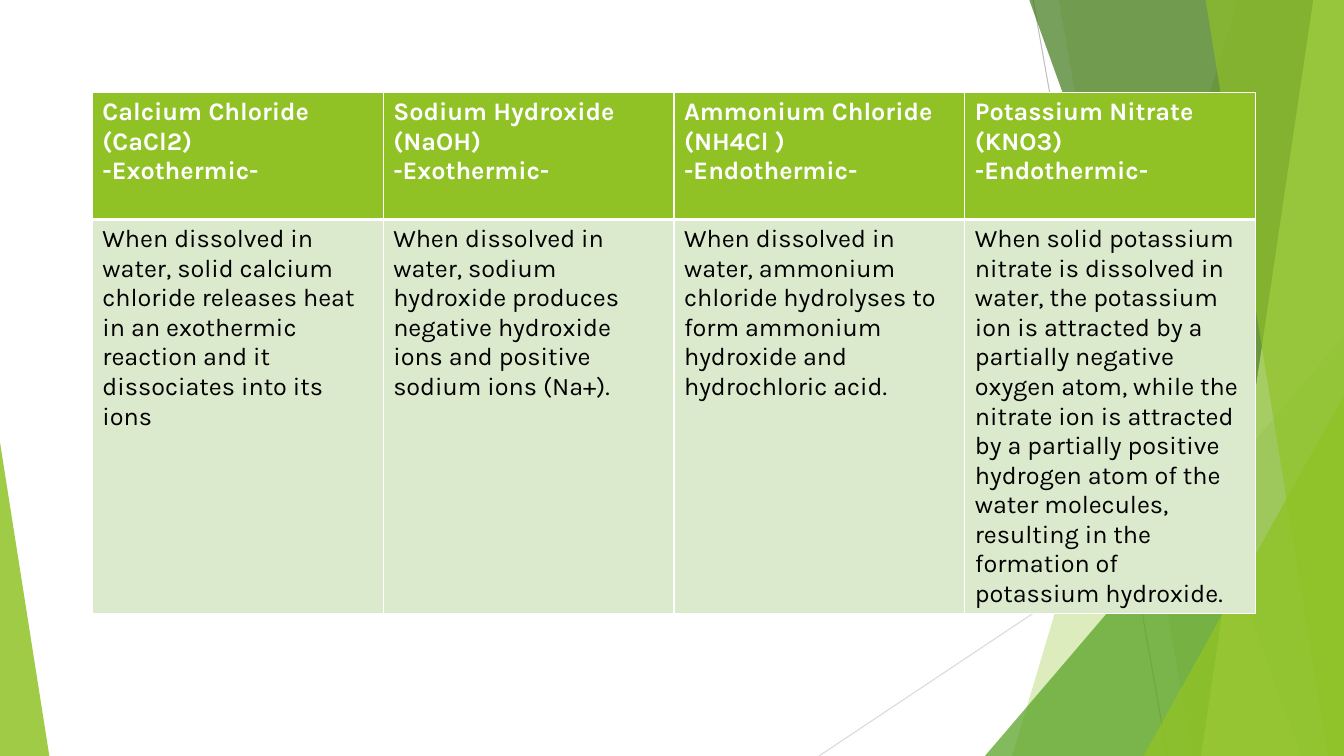
"""Build a slide with a table of four dissolving reactions over green facets."""
from lxml import etree
from pptx import Presentation, util as u
from pptx.dml.color import RGBColor
from pptx.enum import shapes
from pptx.oxml import ns

PX = 9525
WIDTH, HEIGHT = 1280, 720
COLOURS = {
    "lime": "90C226", "green": "54A021", "forest": "3F7819", "pale": "C0E474",
    "mint": "DBE9CD", "white": "FFFFFF", "black": "000000",
    "grey": "BFBFBF", "silver": "D9D9D9",
}


def rgb(name):
    return RGBColor.from_string(COLOURS[name])


def add_node(parent, tag, **attributes):
    return etree.SubElement(parent, ns.qn(tag), attributes)


deck = Presentation()
deck.slide_width, deck.slide_height = WIDTH * PX, HEIGHT * PX
slide = deck.slides.add_slide(deck.slide_layouts[6])

rays = [((984, 0, 1112, 720), "grey"), ((1280, 387, 780, 720), "silver")]
for ends, colour in rays:
    ray = slide.shapes.add_connector(
        shapes.MSO_CONNECTOR.STRAIGHT, *[end * PX for end in ends])
    ray.line.color.rgb = rgb(colour)
    ray.line.width = u.Pt(0.75)
    add_node(ray._element.spPr, "a:effectLst")

facets = [
    ("band", (1179, 964), "lime", 30),
    ("band", (1008, 1136), "lime", 20),
    ("triangle", (938, 320, 342, 400, 1), "green", 72),
    ("band", (980, 1239), "forest", 70),
    ("band", (1251, 1144), "pale", 70),
    ("band", (1148, 1265), "lime", 65),
    ("triangle", (1089, 377, 191, 343, 1), "lime", 80),
    ("triangle", (0, 421, 47, 299, 0), "lime", 85),
]
for kind, geometry, colour, opacity in facets:
    if kind == "band":
        top_x, bottom_x = geometry
        outline = slide.shapes.build_freeform(top_x, -1, scale=PX)
        outline.add_line_segments([(WIDTH, -1), (WIDTH, HEIGHT), (bottom_x, HEIGHT)])
        facet = outline.convert_to_shape()
    else:
        *frame, apex = geometry
        facet = slide.shapes.add_shape(
            shapes.MSO_SHAPE.ISOSCELES_TRIANGLE, *[length * PX for length in frame])
        facet.adjustments[0] = apex
    facet.shadow.inherit = False
    facet.line.fill.background()
    facet.fill.solid()
    facet.fill.fore_color.rgb = rgb(colour)
    tint = facet._element.spPr.find(".//" + ns.qn("a:srgbClr"))
    add_node(tint, "a:alpha", val=str(opacity * 1000))

reactions = [
    ("Calcium Chloride (CaCl2)", "-Exothermic-",
     "When dissolved in water, solid calcium chloride releases heat in an "
     "exothermic reaction and it dissociates into its ions"),
    ("Sodium Hydroxide (NaOH)", "-Exothermic-",
     "When dissolved in water, sodium hydroxide produces negative hydroxide "
     "ions and positive sodium ions (Na+)."),
    ("Ammonium Chloride (NH4Cl )", "-Endothermic-",
     "When dissolved in water, ammonium chloride hydrolyses to form ammonium "
     "hydroxide and hydrochloric acid."),
    ("Potassium Nitrate (KNO3)", "-Endothermic-",
     "When solid potassium nitrate is dissolved in water, the potassium ion is "
     "attracted by a partially negative oxygen atom, while the nitrate ion is "
     "attracted by a partially positive hydrogen atom of the water molecules, "
     "resulting in the formation of potassium hydroxide."),
]
column_width, row_heights = 277, (121, 375)
table = slide.shapes.add_table(
    2, len(reactions), 88 * PX, 88 * PX,
    column_width * len(reactions) * PX, sum(row_heights) * PX).table
for row, height in zip(table.rows, row_heights):
    row.height = height * PX

row_styles = [
    ("lime", "white", True, {"L": 1, "R": 1, "T": 1, "B": 3}),
    ("mint", "black", False, {"L": 1, "R": 1, "T": 3, "B": 1}),
]
for column, (substance, heat, explanation) in enumerate(reactions):
    table.columns[column].width = column_width * PX
    for row, lines in enumerate([(substance, heat), (explanation,)]):
        fill, ink, bold, borders = row_styles[row]
        cell = table.cell(row, column)
        properties = cell._tc.get_or_add_tcPr()
        for side, points in borders.items():
            border = add_node(properties, f"a:ln{side}", w=str(u.Pt(points)))
            add_node(add_node(border, "a:solidFill"), "a:srgbClr", val=COLOURS["white"])
        cell.fill.solid()
        cell.fill.fore_color.rgb = rgb(fill)
        for index, line in enumerate(lines):
            frame = cell.text_frame
            paragraph = frame.add_paragraph() if index else frame.paragraphs[0]
            run = paragraph.add_run()
            run.text = line
            run.font.name = "Karla"
            run.font.size = u.Pt(18)
            run.font.bold = bold
            run.font.color.rgb = rgb(ink)

deck.save("out.pptx")
